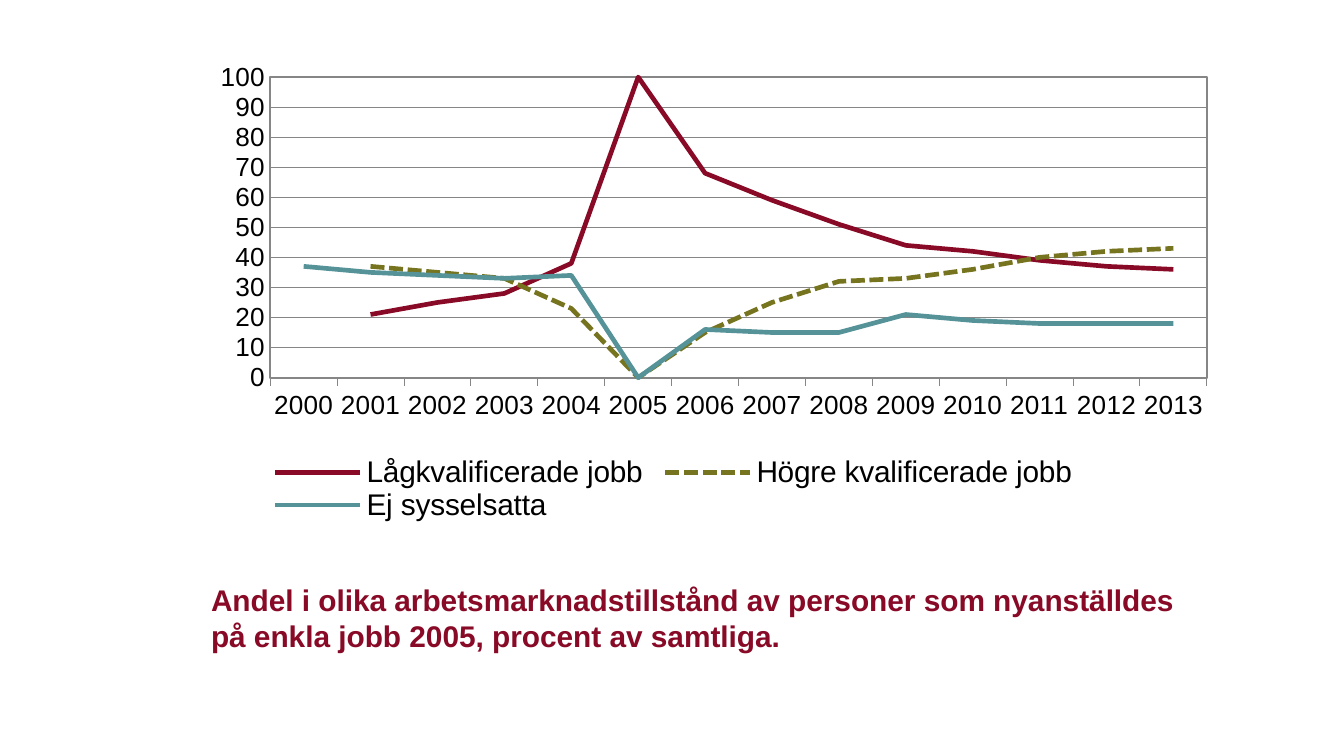
import dataclasses
import typing

import lxml.etree
import pptx
import pptx.chart.data
import pptx.dml.color
import pptx.enum.chart
import pptx.enum.dml
import pptx.enum.text
import pptx.oxml
import pptx.oxml.ns
import pptx.util

FONT = "Arial"
WINE, OLIVE, TEAL = "880A26", "76741E", "559398"
BLACK, GREY = "000000", "868686"
WIDTH = pptx.util.Inches(10)
HEIGHT = WIDTH * 9 // 16
YEARS = [str(year) for year in range(2000, 2014)]


@dataclasses.dataclass
class Share:
    x: float
    y: float
    w: float
    h: float

    def on_slide(self) -> tuple[int, int, int, int]:
        return (int(self.x * WIDTH), int(self.y * HEIGHT),
                int(self.w * WIDTH), int(self.h * HEIGHT))


@dataclasses.dataclass
class Status:
    name: str
    color: str
    values: list[typing.Optional[int]]
    dash: typing.Optional[pptx.enum.dml.MSO_LINE] = None


STATUSES = [
    Status("Lågkvalificerade jobb", WINE,
           [None, 21, 25, 28, 38, 100, 68, 59, 51, 44, 42, 39, 37, 36]),
    Status("Högre kvalificerade jobb", OLIVE,
           [None, 37, 35, 33, 23, 0, 15, 25, 32, 33, 36, 40, 42, 43],
           pptx.enum.dml.MSO_LINE.SQUARE_DOT),
    Status("Ej sysselsatta", TEAL,
           [37, 35, 34, 33, 34, 0, 16, 15, 15, 21, 19, 18, 18, 18]),
]


def rgb(color: str) -> pptx.dml.color.RGBColor:
    return pptx.dml.color.RGBColor.from_string(color)


def set_font(font, size: float, color: str, bold: bool = False) -> None:
    font.name = FONT
    font.size = pptx.util.Pt(size)
    font.bold = bold
    font.color.rgb = rgb(color)


def set_line(line, color: str, width: float, dash=None) -> None:
    line.color.rgb = rgb(color)
    line.width = pptx.util.Pt(width)
    if dash is not None:
        line.dash_style = dash


def make_layout(share: Share, inner: bool = False):
    layout = pptx.oxml.parse_xml(
        f'<c:layout {pptx.oxml.ns.nsdecls("c")}><c:manualLayout/></c:layout>')
    settings = {"layoutTarget": "inner"} if inner else {}
    settings |= {"xMode": "edge", "yMode": "edge"}
    settings |= dataclasses.asdict(share)
    for tag, value in settings.items():
        lxml.etree.SubElement(
            layout[0], pptx.oxml.ns.qn(f"c:{tag}"), val=str(value))
    return layout


def drop_layout(parent) -> None:
    for layout in parent.findall(pptx.oxml.ns.qn("c:layout")):
        parent.remove(layout)


def style_axis(axis, tick) -> None:
    axis.major_tick_mark = tick
    axis.minor_tick_mark = pptx.enum.chart.XL_TICK_MARK.NONE
    set_font(axis.tick_labels.font, 14, BLACK)
    set_line(axis.format.line, GREY, 0.5)


def style_plot_area(chart, share: Share) -> None:
    area = chart.element.find(".//" + pptx.oxml.ns.qn("c:plotArea"))
    drop_layout(area)
    area.insert(0, make_layout(share, inner=True))
    area.append(pptx.oxml.parse_xml(
        f'<c:spPr {pptx.oxml.ns.nsdecls("c", "a")}><a:noFill/>'
        f'<a:ln w="12700"><a:solidFill><a:srgbClr val="{GREY}"/>'
        '</a:solidFill></a:ln></c:spPr>'))


def style_legend(chart, share: Share) -> None:
    chart.has_legend = True
    legend = chart.legend
    legend.position = pptx.enum.chart.XL_LEGEND_POSITION.BOTTOM
    legend.include_in_layout = False
    set_font(legend.font, 16, BLACK)
    element = chart.element.find(".//" + pptx.oxml.ns.qn("c:legend"))
    drop_layout(element)
    element.find(pptx.oxml.ns.qn("c:legendPos")).addnext(make_layout(share))


def add_status_chart(s, share: Share) -> None:
    data = pptx.chart.data.CategoryChartData(number_format="General")
    data.categories = YEARS
    for status in STATUSES:
        data.add_series(status.name, status.values)
    chart = s.shapes.add_chart(
        pptx.enum.chart.XL_CHART_TYPE.LINE, *share.on_slide(), data).chart
    chart.has_title = False
    set_font(chart.font, 18, BLACK)

    chart.plots[0].vary_by_categories = False
    for series, status in zip(chart.plots[0].series, STATUSES):
        series.smooth = False
        series.marker.style = pptx.enum.chart.XL_MARKER_STYLE.NONE
        set_line(series.format.line, status.color, 2.5, status.dash)

    ticks = pptx.enum.chart.XL_TICK_MARK
    style_axis(chart.category_axis, ticks.OUTSIDE)
    chart.category_axis.tick_label_position = (
        pptx.enum.chart.XL_TICK_LABEL_POSITION.LOW)
    axis = chart.value_axis
    style_axis(axis, ticks.NONE)
    axis.minimum_scale, axis.maximum_scale, axis.major_unit = 0, 100, 10
    axis.has_major_gridlines = True
    set_line(axis.major_gridlines.format.line, GREY, 0.5)

    style_plot_area(chart, Share(0.097, 0.047, 0.889, 0.645))
    style_legend(chart, Share(0.09, 0.86, 0.78, 0.14))


def fill_title(s, share: Share, text: str) -> None:
    sp = s.shapes.title
    sp.left, sp.top, sp.width, sp.height = share.on_slide()
    tf = sp.text_frame
    tf.word_wrap = True
    tf.auto_size = pptx.enum.text.MSO_AUTO_SIZE.NONE
    tf.vertical_anchor = pptx.enum.text.MSO_ANCHOR.BOTTOM
    tf.margin_left = 0
    tf.margin_right = pptx.util.Inches(0.1)
    tf.margin_top = tf.margin_bottom = pptx.util.Inches(0.05)
    p = tf.paragraphs[0]
    p.alignment = pptx.enum.text.PP_ALIGN.LEFT
    r = p.add_run()
    r.text = text
    set_font(r.font, 16, WINE, bold=True)


def main() -> None:
    prs = pptx.Presentation()
    prs.slide_width, prs.slide_height = WIDTH, HEIGHT
    s = prs.slides.add_slide(prs.slide_layouts.get_by_name("Title Only"))
    fill_title(s, Share(0.157, 0.791, 0.743, 0.082),
               "Andel i olika arbetsmarknadstillstånd av personer som "
               "nyanställdes på enkla jobb 2005, procent av samtliga.")
    add_status_chart(s, Share(0.125, 0.073, 0.784, 0.617))
    prs.save("out.pptx")


if __name__ == "__main__":
    main()
